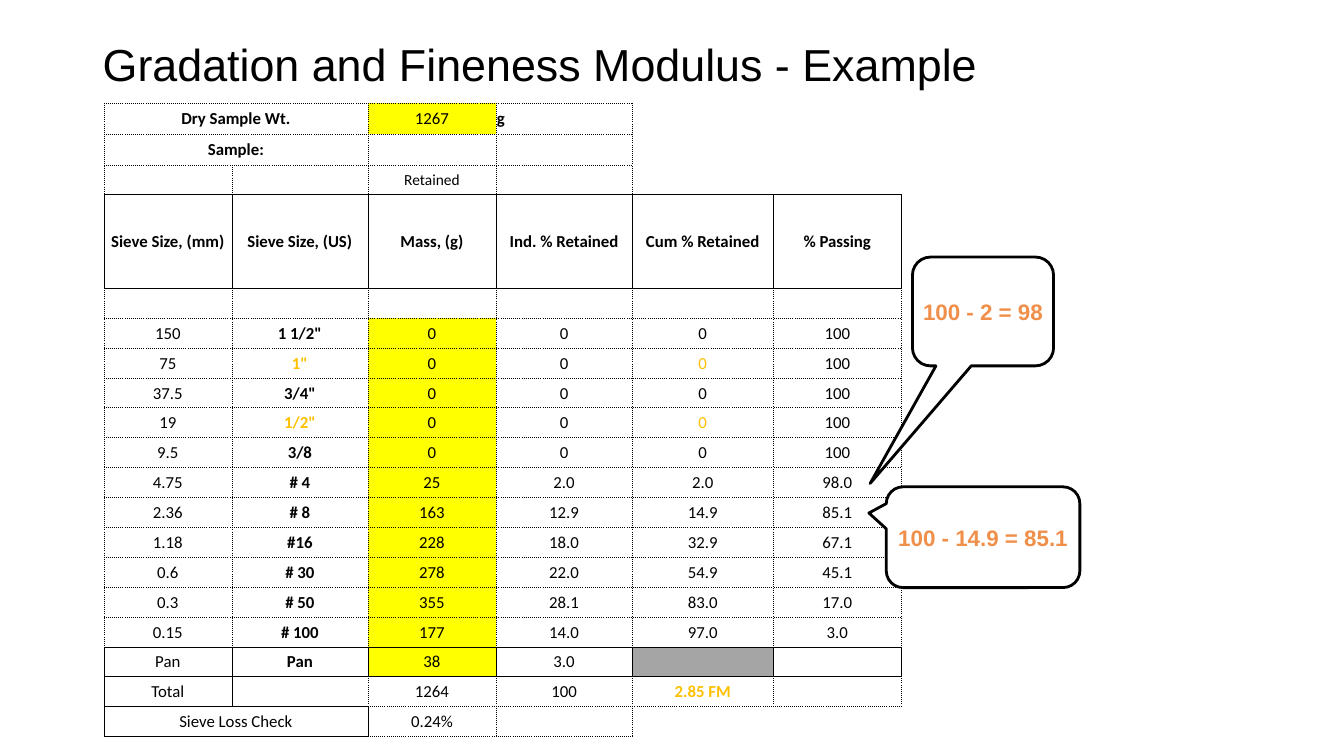
from dataclasses import dataclass
from lxml import etree
from pptx import Presentation
from pptx.dml.color import RGBColor
from pptx.enum.shapes import MSO_SHAPE
from pptx.enum.text import MSO_ANCHOR, PP_ALIGN
from pptx.oxml.ns import qn
from pptx.util import Inches, Pt

CALLOUT = MSO_SHAPE.ROUNDED_RECTANGULAR_CALLOUT
MIDDLE, TOP = MSO_ANCHOR.MIDDLE, MSO_ANCHOR.TOP
LEFT, CENTER = PP_ALIGN.LEFT, PP_ALIGN.CENTER

# Content
TITLE = "Gradation and Fineness Modulus - Example"
HEADINGS = ["Sieve Size, (mm)", "Sieve Size, (US)", "Mass, (g)",
            "Ind. % Retained", "Cum % Retained", "% Passing"]
SIEVES = [
    ["150", '1 1/2"', "0", "0", "0", "100"],
    ["75", '1"', "0", "0", "0", "100"],
    ["37.5", '3/4"', "0", "0", "0", "100"],
    ["19", '1/2"', "0", "0", "0", "100"],
    ["9.5", "3/8", "0", "0", "0", "100"],
    ["4.75", "# 4", "25", "2.0", "2.0", "98.0"],
    ["2.36", "# 8", "163", "12.9", "14.9", "85.1"],
    ["1.18", "#16", "228", "18.0", "32.9", "67.1"],
    ["0.6", "# 30", "278", "22.0", "54.9", "45.1"],
    ["0.3", "# 50", "355", "28.1", "83.0", "17.0"],
    ["0.15", "# 100", "177", "14.0", "97.0", "3.0"],
]
ROWS = [
    ["Dry Sample Wt.", "", "1267", "g", "", ""],
    ["Sample:", "", "", "", "", ""],
    ["", "", "Retained", "", "", ""],
    HEADINGS,
    [""] * 6,
    *SIEVES,
    ["Pan", "Pan", "38", "3.0", "", ""],
    ["Total", "", "1264", "100", "2.85 FM", ""],
    ["Sieve Loss Check", "", "0.24%", "", "", ""],
]
# Text, box (left, top, width, height), pointer tip relative to the box centre
CALLOUTS = [
    ("100 - 2 = 98", (9.05, 2.55, 1.4, 1.08), (-0.8, 1.58)),
    ("100 - 14.9 = 85.1", (8.79, 4.83, 1.92, 1.0), (-0.59, -0.24)),
]


@dataclass(frozen=True)
class Theme:
    ink: str = "000000"
    paper: str = "FFFFFF"
    entry: str = "FFFF00"
    blocked: str = "A5A5A5"
    accent: str = "FFC000"
    note: str = "F08F49"
    title_font: str = "Arial"
    table_font: str = "Calibri"
    title_size: int = 32
    note_size: int = 16
    table_size: int = 12
    small_size: int = 11


THEME = Theme()

# Row and column roles
WEIGHT, SAMPLE, RETAINED, HEADER, SPACER = range(5)
FIRST_SIEVE = SPACER + 1
PAN = FIRST_SIEVE + len(SIEVES)
TOTAL, LOSS = PAN + 1, PAN + 2
US, MASS, IND, CUM = 1, 2, 3, 4
MERGED = (WEIGHT, SAMPLE, LOSS)
UNUSED_SIEVES = (FIRST_SIEVE + 1, FIRST_SIEVE + 3)

# Table grid
TABLE_LEFT, TABLE_TOP, TABLE_HEIGHT = 1.03, 1.02, 6.29
COLUMN_WIDTHS = [1.27, 1.35, 1.27, 1.35, 1.4, 1.27]
TOP_HEIGHTS = [0.31, 0.31, 0.29, 0.93]
body_height = (TABLE_HEIGHT - sum(TOP_HEIGHTS)) / (len(ROWS) - len(TOP_HEIGHTS))
ROW_HEIGHTS = TOP_HEIGHTS + [body_height] * (len(ROWS) - len(TOP_HEIGHTS))

# Edges: width in points and dash
DOTTED, SOLID, HEAVY = (0.5, "dot"), (0.5, "solid"), (1, "solid")


def rgb(value):
    return RGBColor.from_string(value)


def set_font(paragraph, name, size, color, bold=False):
    font = paragraph.font
    font.name, font.size, font.bold = name, Pt(size), bold
    font.color.rgb = rgb(color)


def horizontal_edge(edge, col):
    """Edge above the row with the same number."""
    if col >= CUM and (edge < HEADER or edge > LOSS):
        return None
    if edge == TOTAL:
        return HEAVY
    if edge in (HEADER, SPACER, PAN) or (edge >= LOSS and col < MASS):
        return SOLID
    return DOTTED


def vertical_edge(row, edge):
    """Edge left of the column with the same number."""
    if edge > CUM and (row < HEADER or row == LOSS):
        return None
    if row in (HEADER, PAN) or (row == TOTAL and edge < MASS) \
            or (row == LOSS and edge <= MASS):
        return SOLID
    return DOTTED


def draw_edges(cell, row, col, span):
    edges = {"a:lnL": vertical_edge(row, col),
             "a:lnR": vertical_edge(row, col + span),
             "a:lnT": horizontal_edge(row, col),
             "a:lnB": horizontal_edge(row + 1, col)}
    properties = cell._tc.get_or_add_tcPr()
    for position, (tag, edge) in enumerate(edges.items()):
        line = etree.Element(qn(tag))
        if edge is None:
            etree.SubElement(line, qn("a:noFill"))
        else:
            width, dash = edge
            line.set("w", str(Pt(width)))
            fill = etree.SubElement(line, qn("a:solidFill"))
            etree.SubElement(fill, qn("a:srgbClr"), val=THEME.ink)
            etree.SubElement(line, qn("a:prstDash"), val=dash)
        properties.insert(position, line)


def cell_color(row, col):
    highlighted = (row in UNUSED_SIEVES and col in (US, CUM)) or (row, col) == (TOTAL, CUM)
    return THEME.accent if highlighted else THEME.ink


def cell_bold(row, col):
    return (row in (SAMPLE, HEADER) or (row == WEIGHT and col != MASS)
            or (FIRST_SIEVE <= row <= PAN and col == US) or (row, col) == (TOTAL, CUM))


def cell_fill(row, col):
    if col == MASS and (row == WEIGHT or FIRST_SIEVE <= row <= PAN):
        return THEME.entry
    return THEME.blocked if (row, col) == (PAN, CUM) else None


def add_gradation_table(slide):
    table = slide.shapes.add_table(
        len(ROWS), len(HEADINGS), Inches(TABLE_LEFT), Inches(TABLE_TOP),
        Inches(sum(COLUMN_WIDTHS)), Inches(TABLE_HEIGHT)).table
    table.first_row = table.horz_banding = False
    for column, width in zip(table.columns, COLUMN_WIDTHS):
        column.width = Inches(width)
    for table_row, height in zip(table.rows, ROW_HEIGHTS):
        table_row.height = Inches(height)
    for row in MERGED:
        table.cell(row, 0).merge(table.cell(row, 1))
    for row, values in enumerate(ROWS):
        for col, value in enumerate(values):
            cell = table.cell(row, col)
            cell.margin_left = cell.margin_right = cell.margin_top = Inches(0.01)
            cell.margin_bottom = 0
            cell.vertical_anchor = MIDDLE
            fill = cell_fill(row, col)
            if fill:
                cell.fill.solid()
                cell.fill.fore_color.rgb = rgb(fill)
            else:
                cell.fill.background()
            draw_edges(cell, row, col, 2 if row in MERGED and col == 0 else 1)
            if not cell.is_spanned:
                cell.text = value
            paragraph = cell.text_frame.paragraphs[0]
            paragraph.alignment = LEFT if (row, col) == (WEIGHT, IND) else CENTER
            size = THEME.small_size if row == RETAINED else THEME.table_size
            set_font(paragraph, THEME.table_font, size, cell_color(row, col), cell_bold(row, col))


def add_callout(slide, text, box, tip):
    callout = slide.shapes.add_shape(CALLOUT, *map(Inches, box))
    callout.shadow.inherit = False
    callout.adjustments[0], callout.adjustments[1] = tip
    callout.fill.solid()
    callout.fill.fore_color.rgb = rgb(THEME.paper)
    callout.line.color.rgb = rgb(THEME.ink)
    callout.line.width = Pt(2)
    frame = callout.text_frame
    frame.word_wrap, frame.vertical_anchor = False, MIDDLE
    frame.text = text
    frame.paragraphs[0].alignment = CENTER
    set_font(frame.paragraphs[0], THEME.title_font, THEME.note_size, THEME.note, True)


def add_title(slide):
    frame = slide.shapes.add_textbox(*map(Inches, (0.92, 0.38, 11.5, 0.65))).text_frame
    frame.word_wrap, frame.vertical_anchor = True, TOP
    frame.text = TITLE
    frame.paragraphs[0].line_spacing = 0.9
    set_font(frame.paragraphs[0], THEME.title_font, THEME.title_size, THEME.ink)


def main():
    deck = Presentation()
    deck.slide_width, deck.slide_height = Inches(13.33), Inches(7.5)
    slide = deck.slides.add_slide(deck.slide_layouts[6])
    add_gradation_table(slide)
    for text, box, tip in CALLOUTS:
        add_callout(slide, text, box, tip)
    add_title(slide)
    deck.save("out.pptx")


if __name__ == "__main__":
    main()
